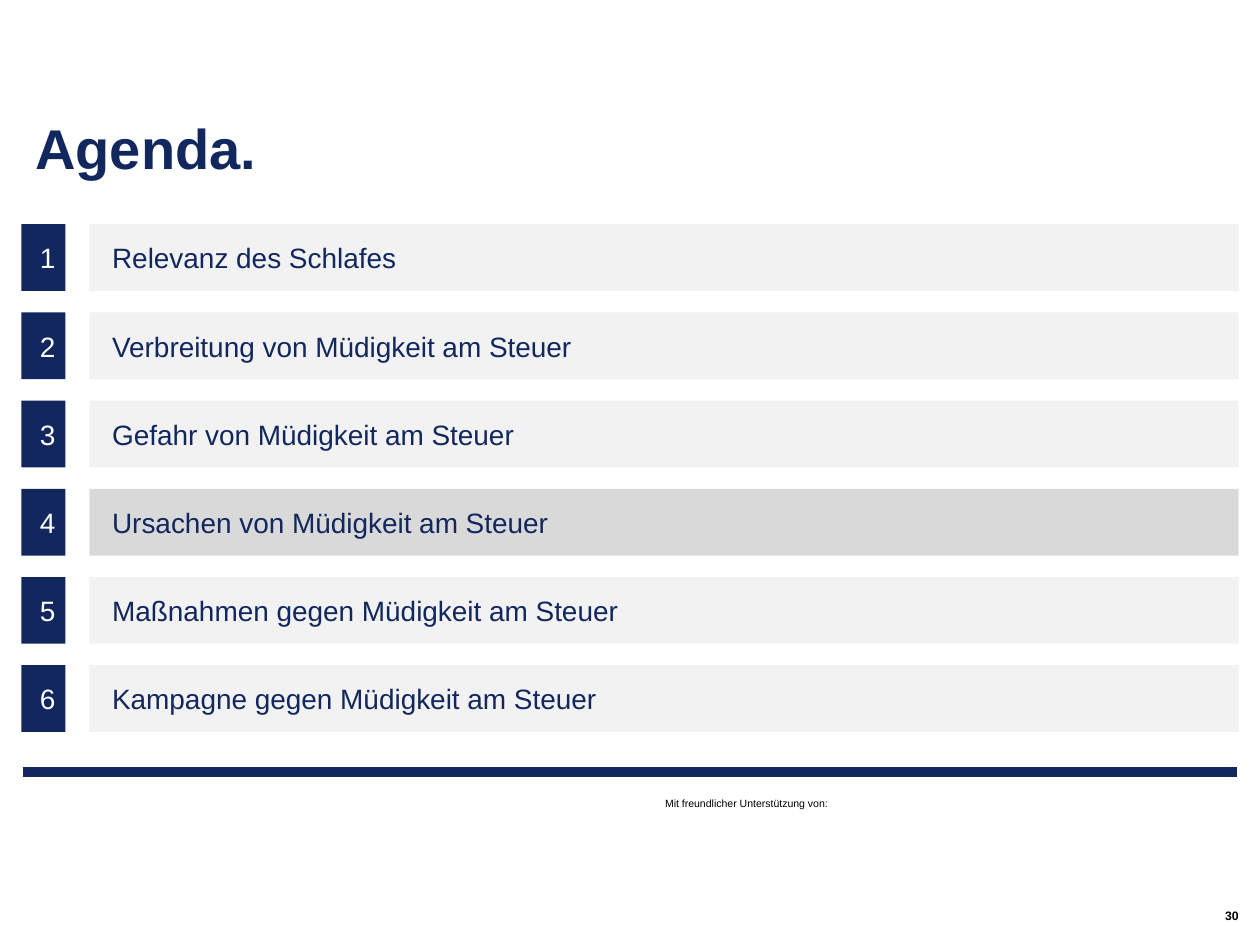
from lxml import etree
from pptx import Presentation
from pptx.dml.color import RGBColor
from pptx.enum.shapes import MSO_CONNECTOR, MSO_SHAPE
from pptx.enum.text import MSO_ANCHOR, MSO_AUTO_SIZE, PP_ALIGN
from pptx.oxml.ns import qn
from pptx.util import Inches, Pt

LEFT, RIGHT = PP_ALIGN.LEFT, PP_ALIGN.RIGHT
TOP, MIDDLE, BOTTOM = MSO_ANCHOR.TOP, MSO_ANCHOR.MIDDLE, MSO_ANCHOR.BOTTOM
NO_FIT = MSO_AUTO_SIZE.NONE
RECTANGLE = MSO_SHAPE.RECTANGLE
STRAIGHT = MSO_CONNECTOR.STRAIGHT
TITLE_ONLY = 5

COLORS = {
    "navy": "11275D",
    "white": "FFFFFF",
    "black": "000000",
    "bar": "F2F2F2",
    "current": "D9D9D9",
}
TOPICS = [
    "Relevanz des Schlafes",
    "Verbreitung von Müdigkeit am Steuer",
    "Gefahr von Müdigkeit am Steuer",
    "Ursachen von Müdigkeit am Steuer",
    "Maßnahmen gegen Müdigkeit am Steuer",
    "Kampagne gegen Müdigkeit am Steuer",
]
CURRENT_TOPIC = 4
FIRST_TOP, ROW_STEP, ROW_HEIGHT = 1.78, 0.7, 0.53


def color(name):
    """Return the named colour."""
    return RGBColor.from_string(COLORS[name])


class AgendaPage:
    """Holds the text style and the slide being built."""

    def __init__(self, page, font_name="Arial"):
        """Keep the slide and its font."""
        self.page = page
        self.font_name = font_name

    def set_text(self, box, text, size, ink, bold=False, align=LEFT, anchor=TOP,
                 inset=(0.1, 0.05), spacing=None):
        """Put one formatted paragraph into a box."""
        frame = box.text_frame
        side, edge = map(Inches, inset)
        frame_format = {
            "word_wrap": True, "auto_size": NO_FIT, "vertical_anchor": anchor,
            "margin_left": side, "margin_right": side,
            "margin_top": edge, "margin_bottom": edge,
        }
        for name, value in frame_format.items():
            setattr(frame, name, value)
        para = frame.paragraphs[0]
        para.alignment = align
        para.line_spacing = spacing
        span = para.add_run()
        span.text = text
        span.font.color.rgb = color(ink)
        font_format = {"name": self.font_name, "size": Pt(size), "bold": bold}
        for name, value in font_format.items():
            setattr(span.font, name, value)

    def title(self, text, place, **style):
        """Move and fill the title placeholder."""
        box = self.page.shapes.title
        for name, value in zip(("left", "top", "width", "height"), place):
            setattr(box, name, Inches(value))
        self.set_text(box, text, **style)

    def label(self, text, place, **style):
        """Add a plain text box."""
        box = self.page.shapes.add_textbox(*map(Inches, place))
        self.set_text(box, text, **style)

    def block(self, text, place, fill, **style):
        """Add a filled rectangle with text."""
        box = self.page.shapes.add_shape(RECTANGLE, *map(Inches, place))
        box.shadow.inherit = False
        box.fill.solid()
        box.fill.fore_color.rgb = color(fill)
        box.line.fill.background()
        self.set_text(box, text, size=16, anchor=MIDDLE, **style)

    def rule(self, ends, ink, width):
        """Add a straight line."""
        line = self.page.shapes.add_connector(STRAIGHT, *map(Inches, ends))
        line.line.color.rgb = color(ink)
        line.line.width = Pt(width)
        etree.SubElement(line._element.spPr, qn("a:effectLst"))

    def topic(self, number, text):
        """Add one agenda row with its number and bar."""
        top = FIRST_TOP + (number - 1) * ROW_STEP
        fill = "current" if number == CURRENT_TOPIC else "bar"
        self.block(str(number), (0.17, top, 0.35, ROW_HEIGHT), "navy",
                   ink="white", align=RIGHT, inset=(0.08, 0.05))
        self.block(text, (0.71, top, 9.12, ROW_HEIGHT), fill,
                   ink="navy", inset=(0.18, 0.05))


def main():
    """Build and save the agenda slide."""
    deck = Presentation()
    deck.slide_width, deck.slide_height = Inches(10), Inches(7.5)
    agenda = AgendaPage(deck.slides.add_slide(deck.slide_layouts[TITLE_ONLY]))
    agenda.rule((0.18, 6.13, 9.82, 6.13), "navy", 5.67)
    agenda.label("Mit freundlicher Unterstützung von:", (5.18, 6.28, 2.03, 0.2),
                 size=6, ink="black")
    agenda.title("Agenda.", (0.18, 0.39, 9.65, 1.05), size=32, ink="navy",
                 bold=True, anchor=BOTTOM, inset=(0.1, 0), spacing=0.9)
    agenda.label("30", (6.45, 7.19, 3.38, 0.16), size=7, ink="black",
                 bold=True, align=RIGHT, anchor=MIDDLE, inset=(0, 0))
    for number, text in enumerate(TOPICS, start=1):
        agenda.topic(number, text)
    deck.save("out.pptx")


if __name__ == "__main__":
    main()
